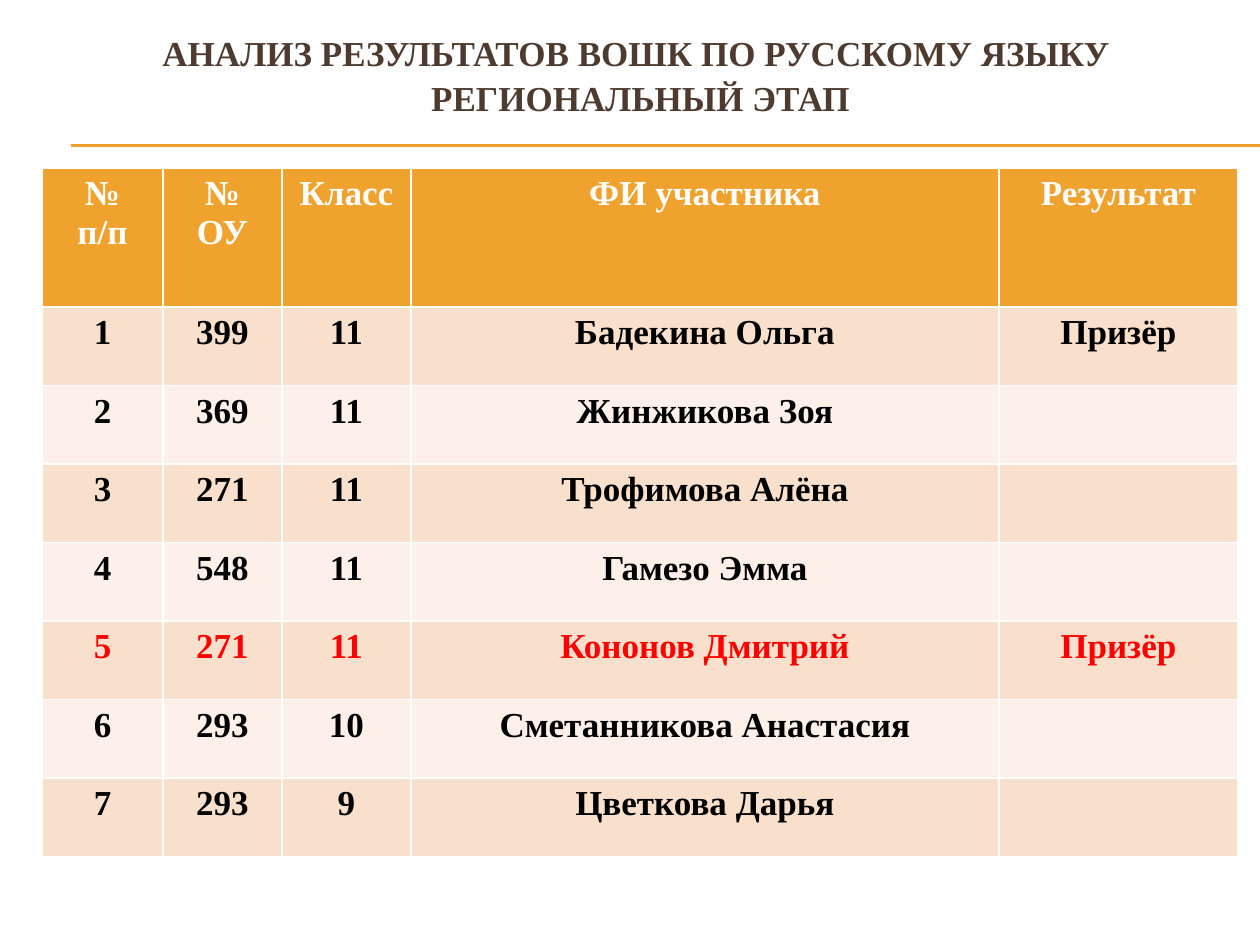
from lxml import etree
from pptx import Presentation
from pptx import util as u
from pptx.dml.color import RGBColor
from pptx.enum import shapes, text
from pptx.oxml.ns import qn

PX = u.Inches(1) / 126
FONT = "Times New Roman"
COLORS = {
    "title": "4E3B30", "accent": "F0A22E", "head_text": "FFFFFF",
    "body_text": "000000", "highlight": "FF0000",
    "band_dark": "F9E0CD", "band_light": "FCF0E8",
}
TITLE = "АНАЛИЗ РЕЗУЛЬТАТОВ ВОШК ПО РУССКОМУ ЯЗЫКУ \vРЕГИОНАЛЬНЫЙ ЭТАП"
COL_WIDTHS = [121, 119, 129, 588, 239]
HEADER_HEIGHT = 139
HIGHLIGHTED_ROW = 5
ROWS = [
    ("№ п/п", "№ ОУ", "Класс", "ФИ участника", "Результат"),
    ("1", "399", "11", "Бадекина Ольга", "Призёр"),
    ("2", "369", "11", "Жинжикова Зоя", ""),
    ("3", "271", "11", "Трофимова Алёна", ""),
    ("4", "548", "11", "Гамезо Эмма", ""),
    ("5", "271", "11", "Кононов Дмитрий", "Призёр"),
    ("6", "293", "10", "Сметанникова Анастасия", ""),
    ("7", "293", "9", "Цветкова Дарья", ""),
]


def px(n):
    """Turn px into EMU."""
    return u.Emu(round(n * PX))


def rgb(name):
    """Look up a named colour."""
    return RGBColor.from_string(COLORS[name])


def style_paragraph(p, color):
    """Centre a paragraph and set its bold font."""
    p.alignment = text.PP_ALIGN.CENTER
    p.font.name, p.font.size, p.font.bold = FONT, u.Pt(20), True
    p.font.color.rgb = rgb(color)


def add_rule(slide, x, y, w):
    """Draw the double rule under the title."""
    for top in (y, y + 1):
        line = slide.shapes.add_connector(
            shapes.MSO_CONNECTOR.STRAIGHT, px(x), px(top), px(x + w), px(top))
        line.line.color.rgb = rgb("accent")
        line.line.width = u.Pt(0.75)
        etree.SubElement(line._element.spPr, qn("a:effectLst"))


def add_title(slide, x, y, w, h):
    """Place the two-line title in its box."""
    tf = slide.shapes.add_textbox(px(x), px(y), px(w), px(h)).text_frame
    tf.word_wrap = True
    tf.vertical_anchor = text.MSO_ANCHOR.MIDDLE
    p = tf.paragraphs[0]
    p.text = TITLE
    p.line_spacing = 1.08
    style_paragraph(p, "title")


def row_colors(i):
    """Return the fill and text colour names of a table row."""
    if i == 0:
        return "accent", "head_text"
    fill = "band_dark" if i % 2 else "band_light"
    return fill, "highlight" if i == HIGHLIGHTED_ROW else "body_text"


def add_results(slide, x, y, w, h):
    """Build the results table in its box."""
    table = slide.shapes.add_table(
        len(ROWS), len(COL_WIDTHS), px(x), px(y), px(w), px(h)).table
    for col, width in zip(table.columns, COL_WIDTHS):
        col.width = px(w * width / sum(COL_WIDTHS))
    body_height = (h - HEADER_HEIGHT) / (len(ROWS) - 1)
    for i, values in enumerate(ROWS):
        table.rows[i].height = px(body_height if i else HEADER_HEIGHT)
        fill, color = row_colors(i)
        for cell, value in zip(table.rows[i].cells, values):
            cell.fill.solid()
            cell.fill.fore_color.rgb = rgb(fill)
            cell.margin_left = cell.margin_right = px(14)
            cell.text = value
            style_paragraph(cell.text_frame.paragraphs[0], color)


def main():
    """Build the slide and save it."""
    prs = Presentation()
    prs.slide_width, prs.slide_height = px(1260), px(945)
    slide = prs.slides.add_slide(prs.slide_layouts[6])
    add_rule(slide, 71, 145, 1189)
    add_title(slide, 42, 0, 1197, 147)
    add_results(slide, 42, 168, 1196, 689)
    prs.save("out.pptx")


if __name__ == "__main__":
    main()
